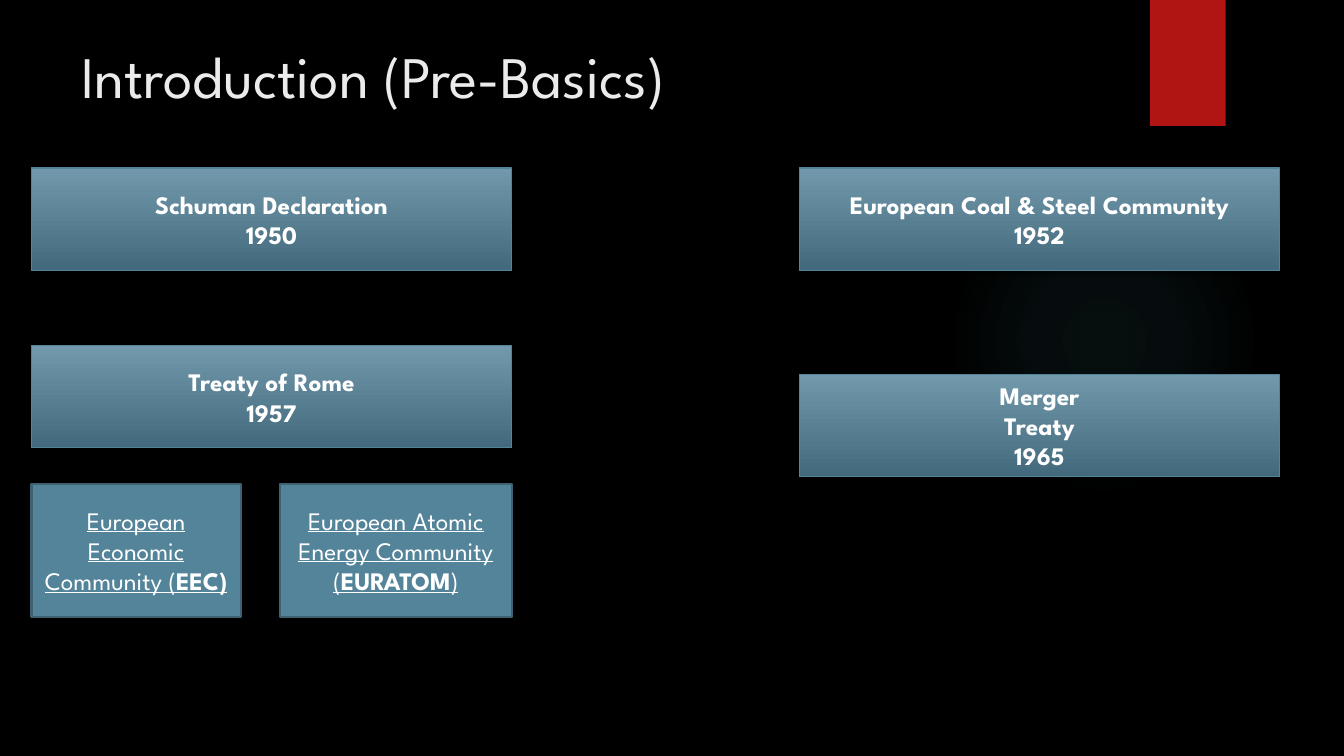
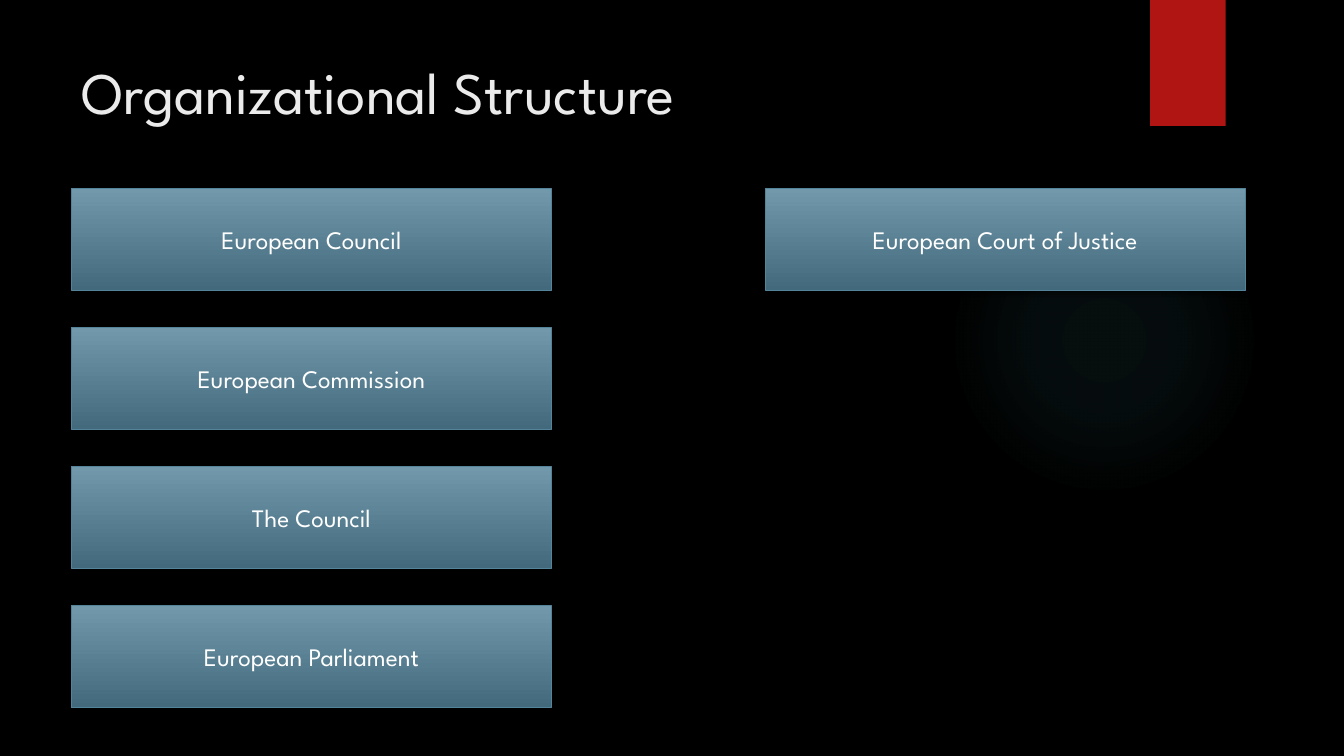
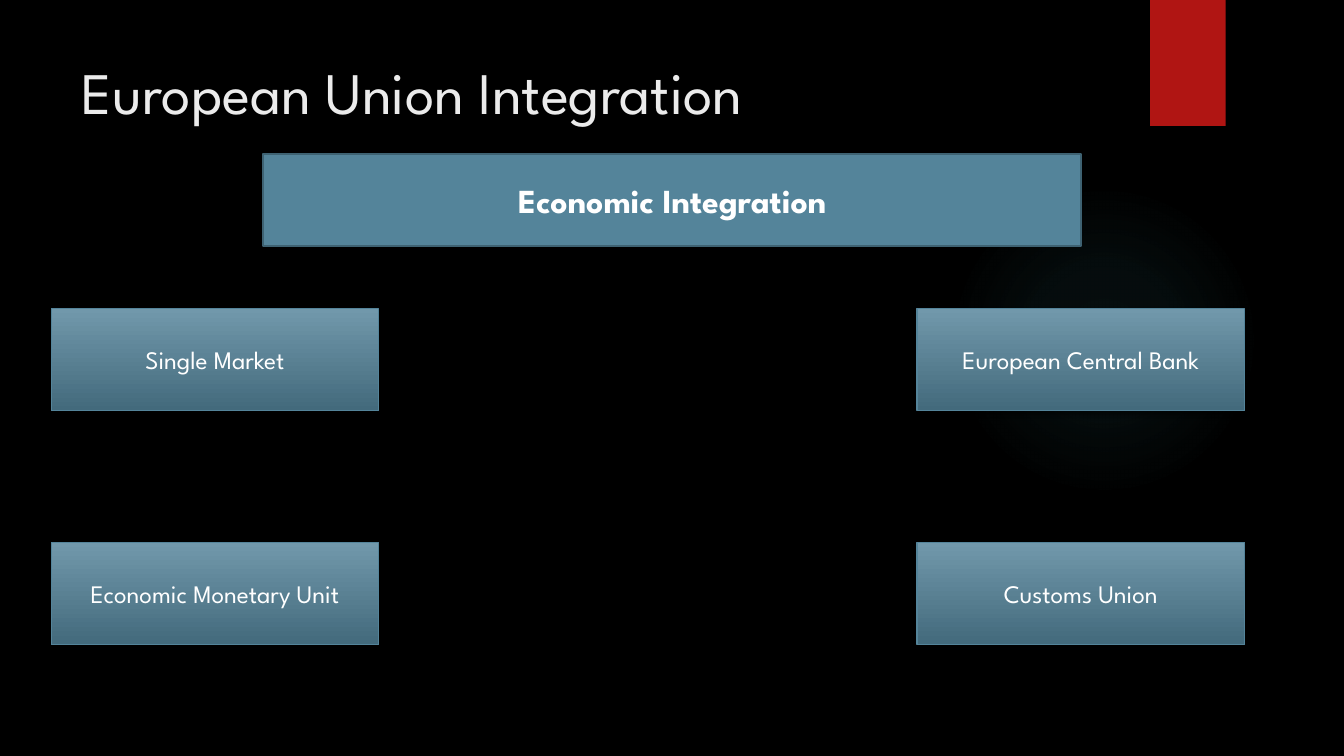
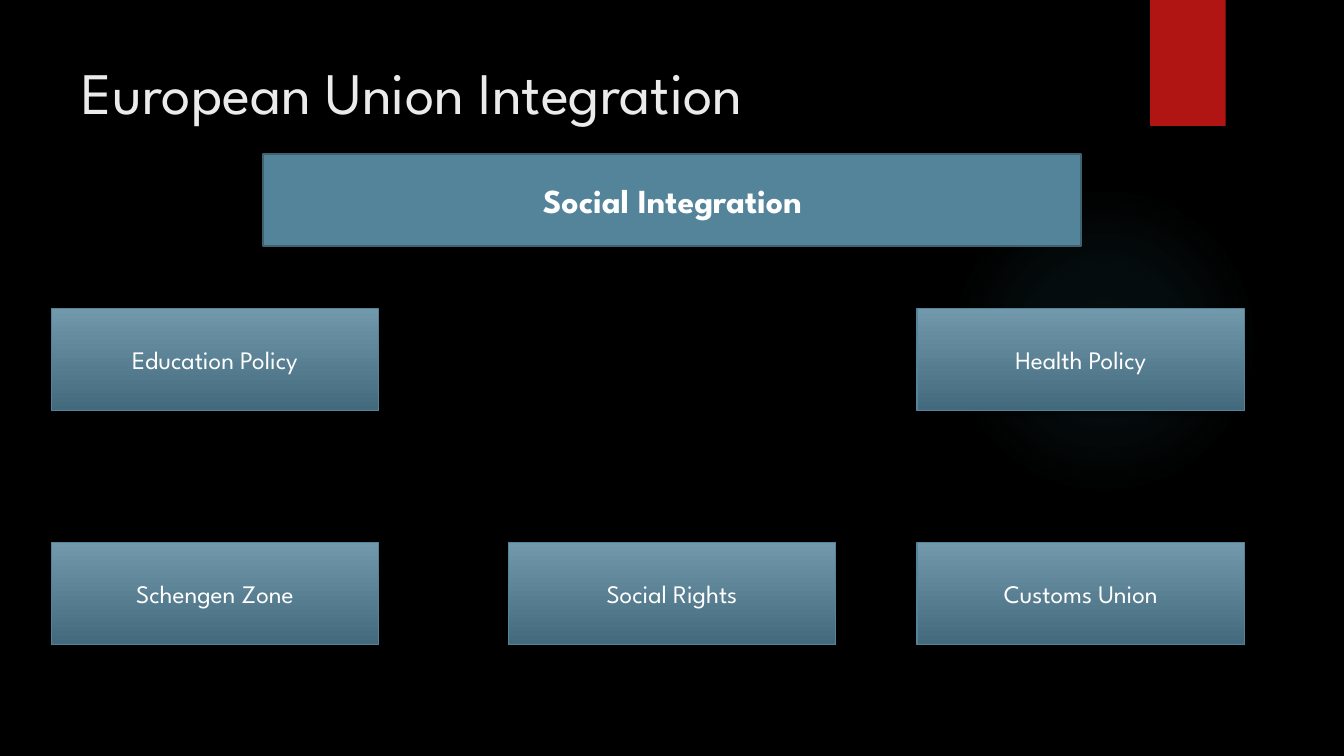
from collections import namedtuple

import pptx
import pptx.dml.color
import pptx.enum.shapes
import pptx.enum.text
import pptx.oxml
import pptx.oxml.ns
import pptx.util

Pt = pptx.util.Pt
RGBColor = pptx.dml.color.RGBColor
ALIGN = pptx.enum.text.PP_ALIGN
ANCHOR = pptx.enum.text.MSO_ANCHOR
SHAPE = pptx.enum.shapes.MSO_SHAPE

FONT = "League Spartan"
BLACK = RGBColor(0x00, 0x00, 0x00)
WHITE = RGBColor(0xFF, 0xFF, 0xFF)
TITLE_GREY = RGBColor(0xEB, 0xEB, 0xEB)
RED = RGBColor(0xB0, 0x15, 0x13)
GLOW = RGBColor(0x50, 0xB9, 0xC1)
STEEL = RGBColor(0x54, 0x84, 0x9A)
STEEL_EDGE = RGBColor(0x3E, 0x62, 0x72)
CARD_TOP = RGBColor(0x71, 0x98, 0xAB)
CARD_BOTTOM = RGBColor(0x43, 0x6A, 0x7C)

CARD_HEIGHT = 73
WIDE_CARD = 343
NARROW_CARD = 234
TITLE_ONLY = 5

Box = namedtuple("Box", "left top width height")


def write(shape, paragraphs, size=18, color=WHITE, bold=False, underline=None,
          align=ALIGN.CENTER, anchor=ANCHOR.MIDDLE):
    """Fill a shape; each paragraph is a string or a list of (text, bold) runs."""
    frame = shape.text_frame
    frame.word_wrap = True
    frame.auto_size = pptx.enum.text.MSO_AUTO_SIZE.NONE
    frame.vertical_anchor = anchor
    for index, content in enumerate(paragraphs):
        paragraph = frame.paragraphs[0] if index == 0 else frame.add_paragraph()
        paragraph.alignment = align
        runs = [(content, bold)] if isinstance(content, str) else content
        for words, run_bold in runs:
            run = paragraph.add_run()
            run.text = words
            font = run.font
            font.name, font.size, font.color.rgb = FONT, Pt(size), color
            font.bold, font.underline = run_bold, underline


def add_shape(slide, box, kind=SHAPE.RECTANGLE, fill=None, line=None, line_width=1):
    shape = slide.shapes.add_shape(kind, *map(Pt, box))
    shape.shadow.inherit = False
    if fill is not None:
        shape.fill.solid()
        shape.fill.fore_color.rgb = fill
    if line is None:
        shape.line.fill.background()
    else:
        shape.line.color.rgb = line
        shape.line.width = Pt(line_width)
    return shape


def add_drop_shadow(shape):
    effects = shape.element.spPr.find(pptx.oxml.ns.qn("a:effectLst"))
    effects.append(pptx.oxml.parse_xml(
        f'<a:outerShdw {pptx.oxml.ns.nsdecls("a")} blurRad="{Pt(3)}" dist="{Pt(2)}" '
        'dir="5400000" algn="ctr" rotWithShape="0">'
        f'<a:srgbClr val="{BLACK}"><a:alpha val="45000"/></a:srgbClr></a:outerShdw>'))


def fill_with_glow(shape, stops):
    """Radial fill; stops are (position, opacity) in percent."""
    shape.fill.background()
    stop_xml = "".join(
        f'<a:gs pos="{position * 1000}"><a:srgbClr val="{GLOW}">'
        f'<a:alpha val="{opacity * 1000}"/></a:srgbClr></a:gs>'
        for position, opacity in stops)
    properties = shape.element.spPr
    properties.replace(
        properties.find(pptx.oxml.ns.qn("a:noFill")),
        pptx.oxml.parse_xml(
            f'<a:gradFill {pptx.oxml.ns.nsdecls("a")} rotWithShape="1">'
            f'<a:gsLst>{stop_xml}</a:gsLst><a:path path="circle">'
            '<a:fillToRect l="50000" t="50000" r="50000" b="50000"/>'
            '</a:path></a:gradFill>'))


def decorate_layout(prs, slide):
    """Build the backdrop and move it to the layout that every slide uses."""
    background = prs.slide_master.background.fill
    background.solid()
    background.fore_color.rgb = BLACK
    glow = add_shape(slide, Box(677.5, 132, 222, 222), kind=SHAPE.OVAL)
    fill_with_glow(glow, [(0, 7), (36, 6), (69, 0)])
    ribbon = add_shape(slide, Box(821.5, 0, 54, 90), fill=RED)
    add_drop_shadow(ribbon)
    for position, part in enumerate((glow, ribbon), start=2):
        slide.slide_layout.shapes.element.insert(position, part.element)


def add_titled_slide(prs, title, top=36):
    slide = prs.slides.add_slide(prs.slide_layouts[TITLE_ONLY])
    heading = slide.shapes.title
    heading.left, heading.top, heading.width, heading.height = map(
        Pt, Box(51, top, 741, 110))
    write(heading, [title], size=42, color=TITLE_GREY,
          align=ALIGN.LEFT, anchor=ANCHOR.TOP)
    return slide


def add_card(slide, box, lines, bold=False):
    card = add_shape(slide, box, line=STEEL, line_width=0.75)
    card.fill.gradient()
    card.fill.gradient_angle = 270
    for stop, color in zip(card.fill.gradient_stops, (CARD_TOP, CARD_BOTTOM)):
        stop.color.rgb = color
    add_drop_shadow(card)
    write(card, lines, bold=bold)


def add_panel(slide, box, paragraphs, **text_format):
    panel = add_shape(slide, box, fill=STEEL, line=STEEL_EDGE, line_width=1.5)
    write(panel, paragraphs, **text_format)


def build_origins(prs):
    slide = add_titled_slide(prs, "Introduction (Pre-Basics)", top=25)
    left, right = 22.5, 571
    milestones = [
        (left, 120, ["Schuman Declaration", "1950"]),
        (right, 120, ["European Coal & Steel Community", "1952"]),
        (left, 247, ["Treaty of Rome", "1957"]),
        (right, 267.5, ["Merger", "Treaty", "1965"]),
    ]
    for x, y, lines in milestones:
        add_card(slide, Box(x, y, WIDE_CARD, CARD_HEIGHT), lines, bold=True)

    economic = [("European Economic Community (", False), ("EEC)", True)]
    atomic = [("European Atomic Energy Community (", False),
              ("EURATOM", True), (")", False)]
    atomic_width = 165.5
    communities = [(left, 149.5, economic),
                   (left + WIDE_CARD - atomic_width, atomic_width, atomic)]
    for x, width, runs in communities:
        add_panel(slide, Box(x, 345.5, width, 95), [runs], underline=True)
    return slide


def build_institutions(prs):
    slide = add_titled_slide(prs, "Organizational Structure")
    top, pitch = 134.5, 99.3
    columns = [
        (51, ["European Council", "European Commission",
              "The Council", "European Parliament"]),
        (546.5, ["European Court of Justice"]),
    ]
    for x, names in columns:
        for row, name in enumerate(names):
            add_card(slide, Box(x, top + row * pitch, WIDE_CARD, CARD_HEIGHT), [name])


def build_integration(prs, area, policy_rows):
    """One area of integration with rows of policies in three columns."""
    slide = add_titled_slide(prs, "European Union Integration")
    add_panel(slide, Box(188, 110, 584.5, 65.5), [area], size=24, bold=True)
    columns = (36.5, 363, 655)
    for y, policies in zip((220.5, 387.5), policy_rows):
        for x, policy in zip(columns, policies):
            if policy:
                add_card(slide, Box(x, y, NARROW_CARD, CARD_HEIGHT), [policy])


def main():
    prs = pptx.Presentation()
    prs.slide_width, prs.slide_height = Pt(960), Pt(540)
    first_slide = build_origins(prs)
    decorate_layout(prs, first_slide)
    build_institutions(prs)
    build_integration(prs, "Economic Integration", [
        ("Single Market", None, "European Central Bank"),
        ("Economic Monetary Unit", None, "Customs Union"),
    ])
    build_integration(prs, "Social Integration", [
        ("Education Policy", None, "Health Policy"),
        ("Schengen Zone", "Social Rights", "Customs Union"),
    ])
    prs.save("out.pptx")


if __name__ == "__main__":
    main()
